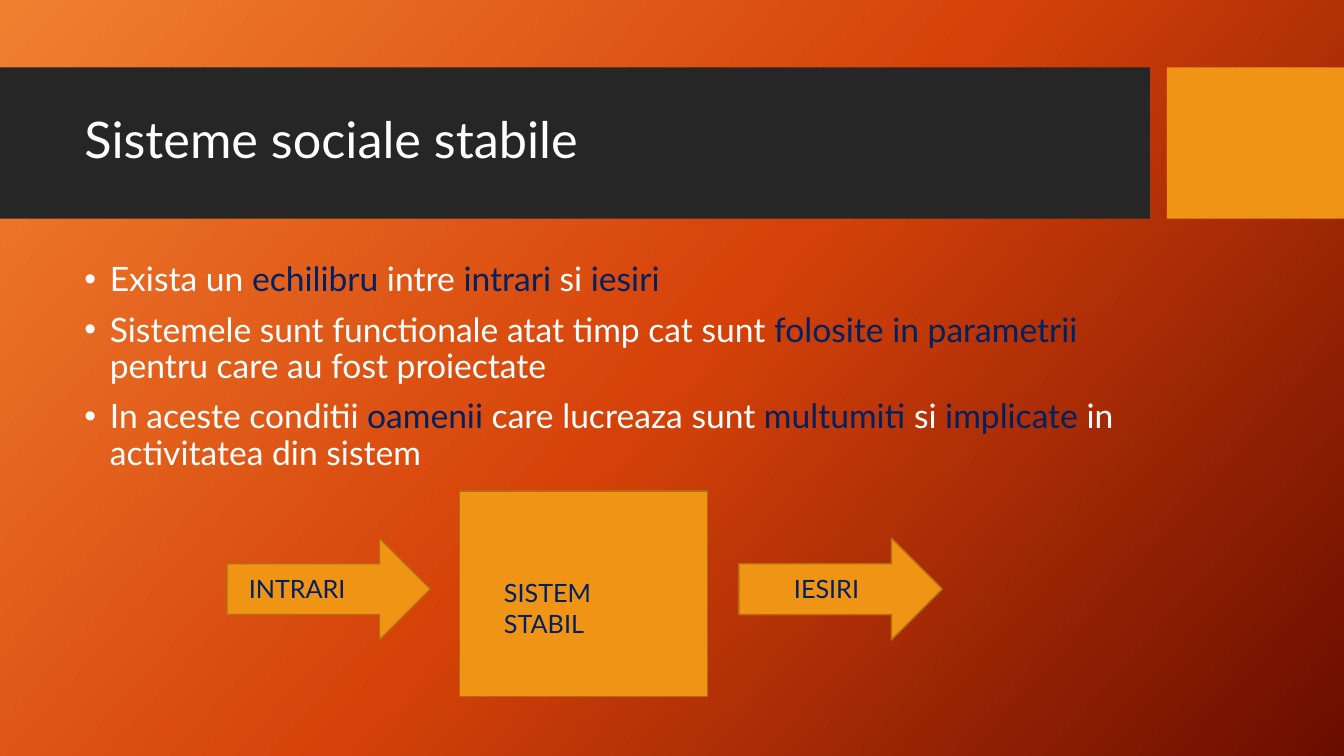
from copy import deepcopy

from lxml.etree import SubElement
from pptx import Presentation
from pptx.dml.color import RGBColor
from pptx.enum.shapes import MSO_SHAPE
from pptx.enum.text import MSO_ANCHOR, MSO_AUTO_SIZE
from pptx.oxml.ns import qn
from pptx.util import Cm, Pt

# Content: words between asterisks are highlighted
TITLE = "Sisteme sociale stabile"
POINTS = [
    "Exista un *echilibru* intre *intrari* si *iesiri*",
    "Sistemele sunt functionale atat timp cat sunt *folosite in parametrii*"
    " pentru care au fost proiectate",
    "In aceste conditii *oamenii* care lucreaza sunt *multumiti* si *implicate*"
    " in activitatea din sistem",
]
LABELS = [  # text, left, top, width
    ("SISTEM STABIL", 12.45, 14.43, 4.52),
    ("INTRARI", 6.02, 14.33, 4.52),
    ("IESIRI", 19.76, 14.33, 2.16),
]

# Format
WHITE, NAVY, DARK, AMBER, BROWN = "FFFFFF", "002060", "262626", "F09415", "B26D10"
GRADIENT = [(0, "F18031"), (0.5, "D54209"), (1, "6A0D00")]
GRADIENT_ANGLE = 42
FONT = "Lato"

# Layout in cm
SLIDE_W, SLIDE_H = 33.87, 19.05
BAND_TOP, BAND_H, BAND_W, BLOCK_LEFT = 1.7, 3.81, 28.98, 29.41
TEXT_LEFT, TEXT_W = 1.88, 26.7
SYSTEM_BOX = (11.58, 12.37, 6.25, 5.18)
ARROW_TOP, ARROW_W, ARROW_H = 13.56, 5.13, 2.57
ARROW_LEFTS = (5.72, 18.62)
BULLET_INDENT = 0.64


def rgb(color):
    return RGBColor.from_string(color)


def add_shape(kind, box, fill, line=None):
    sp = s.shapes.add_shape(kind, *map(Cm, box))
    sp.shadow.inherit = False
    sp.fill.solid()
    sp.fill.fore_color.rgb = rgb(fill)
    if line:
        sp.line.color.rgb = rgb(line)
        sp.line.width = Pt(1)
    else:
        sp.line.fill.background()


def add_text(box, **frame_format):
    tf = s.shapes.add_textbox(*map(Cm, box)).text_frame
    for name, value in {"word_wrap": True, **frame_format}.items():
        setattr(tf, name, value)
    return tf


def add_run(p, text, size, color):
    r = p.add_run()
    r.text = text
    for name, value in {"name": FONT, "size": Pt(size)}.items():
        setattr(r.font, name, value)
    r.font.color.rgb = rgb(color)


def add_bullet(p):
    pPr = p._p.get_or_add_pPr()
    pPr.set("marL", str(Cm(BULLET_INDENT)))
    pPr.set("indent", str(-Cm(BULLET_INDENT)))
    SubElement(pPr, qn("a:buFont")).set("typeface", "Arial")
    SubElement(pPr, qn("a:buChar")).set("char", "•")


prs = Presentation()
prs.slide_width, prs.slide_height = Cm(SLIDE_W), Cm(SLIDE_H)
s = prs.slides.add_slide(prs.slide_layouts[6])

# Background gradient
fill = s.background.fill
fill.gradient()
fill.gradient_angle = 360 - GRADIENT_ANGLE
stops = s._element.find(".//" + qn("a:gsLst"))
stops.append(deepcopy(stops[-1]))
for stop, (position, color) in zip(fill.gradient_stops, GRADIENT):
    stop.position = position
    stop.color.rgb = rgb(color)

# Title band
add_shape(MSO_SHAPE.RECTANGLE, (0, BAND_TOP, BAND_W, BAND_H), DARK)
add_shape(MSO_SHAPE.RECTANGLE,
          (BLOCK_LEFT, BAND_TOP, SLIDE_W - BLOCK_LEFT, BAND_H), AMBER)
tf = add_text((TEXT_LEFT, 2.08, TEXT_W, 3), vertical_anchor=MSO_ANCHOR.MIDDLE)
p = tf.paragraphs[0]
p.line_spacing = 0.9
add_run(p, TITLE, 36, WHITE)

# Bulleted points
tf = add_text((TEXT_LEFT, 6.5, TEXT_W, 10))
for i, point in enumerate(POINTS):
    p = tf.add_paragraph() if i else tf.paragraphs[0]
    add_bullet(p)
    p.line_spacing = 0.9
    p.space_before = Pt(10 if i else 0)
    for j, part in enumerate(point.split("*")):
        if part:
            add_run(p, part, 24, NAVY if j % 2 else WHITE)

# Diagram: inputs, system, outputs
add_shape(MSO_SHAPE.RECTANGLE, SYSTEM_BOX, AMBER, BROWN)
for left in ARROW_LEFTS:
    add_shape(MSO_SHAPE.RIGHT_ARROW, (left, ARROW_TOP, ARROW_W, ARROW_H), AMBER, BROWN)
for text, left, top, width in LABELS:
    tf = add_text((left, top, width, 1.02), auto_size=MSO_AUTO_SIZE.SHAPE_TO_FIT_TEXT)
    add_run(tf.paragraphs[0], text, 18, NAVY)

prs.save("out.pptx")
